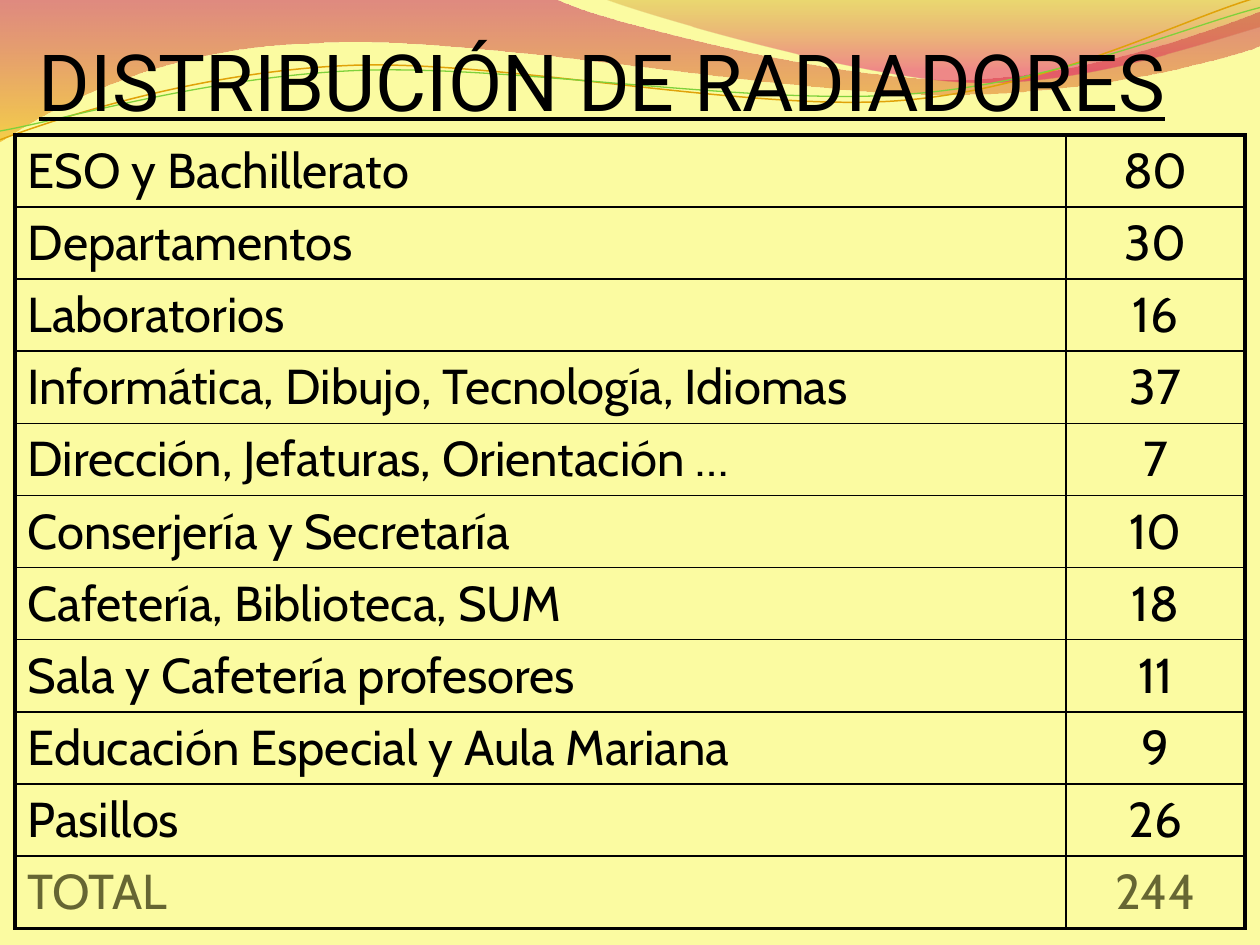
from pptx import Presentation
from pptx.dml.color import RGBColor
from pptx.enum.text import MSO_ANCHOR, PP_ALIGN
from pptx.oxml.ns import qn
from pptx.util import Inches, Pt
from lxml import etree

BLACK = "000000"
RADIATORS = [
    ("ESO y Bachillerato", "80"),
    ("Departamentos", "30"),
    ("Laboratorios", "16"),
    ("Informática, Dibujo, Tecnología, Idiomas", "37"),
    ("Dirección, Jefaturas, Orientación …", "7"),
    ("Conserjería y Secretaría", "10"),
    ("Cafetería, Biblioteca, SUM", "18"),
    ("Sala y Cafetería profesores", "11"),
    ("Educación Especial y Aula Mariana", "9"),
    ("Pasillos", "26"),
    ("TOTAL", "244"),
]

# Waves: each list holds a start point, then line ends (2 numbers)
# or Bézier segments (6 numbers), in inches.
LEFT_WAVE = [
    (0, 0), (4.4, -0.01), (4.76, 0.17, 6.64, 0.63, 7.58, 0.63),
    (8.53, 0.63, 9.58, 0.26, 10, 0.09), (10.01, 0.36),
    (9.83, 0.44, 8.7, 0.76, 7.46, 0.75), (6.22, 0.75, 3.82, 0.28, 2.57, 0.34),
    (1.29, 0.36, 0.46, 0.83, -0.01, 1.13),
]
RIGHT_WAVE = [
    (4.79, -0.01), (5.09, 0.11, 6.82, 0.62, 7.69, 0.65),
    (8.56, 0.69, 9.61, 0.32, 10, 0.21), (10, 0),
]
ORANGE_CURVE = [
    (0, 1.11), (0.48, 0.93, 1.58, 0.57, 2.77, 0.52),
    (3.95, 0.47, 5.93, 0.89, 7.13, 0.8), (8.33, 0.71, 9.38, 0.15, 9.98, -0.02),
]
GREEN_CURVE = [
    (0, 1.04), (0.47, 0.96, 1.64, 0.61, 2.83, 0.56),
    (4.03, 0.51, 5.97, 0.84, 7.17, 0.75), (8.36, 0.67, 9.41, 0.21, 10, 0.06),
]


def color(hex_value):
    return RGBColor.from_string(hex_value)


def add_outline(shapes, outline, close):
    points = [
        (Inches(x), Inches(y))
        for segment in outline
        for x, y in zip(segment[::2], segment[1::2])
    ]
    builder = shapes.build_freeform(*points[0])
    builder.add_line_segments(points[1:], close=close)
    shape = builder.convert_to_shape()
    shape.shadow.inherit = False
    # Join the three lines of each Bézier segment into one curve
    lines = iter(list(shape._element.iter(qn("a:lnTo"))))
    for segment in outline[1:]:
        first = next(lines)
        if len(segment) == 6:
            first.tag = qn("a:cubicBezTo")
            for line in (next(lines), next(lines)):
                first.append(line[0])
                line.getparent().remove(line)
    return shape


def add_wave(shapes, outline, stops):
    wave = add_outline(shapes, outline, close=True)
    wave.line.fill.background()
    wave.fill.gradient()
    wave.fill.gradient_angle = 270
    for stop, (position, hex_value, _) in zip(wave.fill.gradient_stops, stops):
        stop.position = position
        stop.color.rgb = color(hex_value)
    for rgb, (_, _, opacity) in zip(wave._element.spPr.iter(qn("a:srgbClr")), stops):
        etree.SubElement(rgb, qn("a:alpha"), val=str(opacity * 1000))


def add_curve(shapes, outline, hex_value, width):
    curve = add_outline(shapes, outline, close=False)
    curve.fill.background()
    curve.line.color.rgb = color(hex_value)
    curve.line.width = Pt(width)


def add_backdrop(slide):
    slide.background.fill.solid()
    slide.background.fill.fore_color.rgb = color("FBFBA1")
    add_wave(slide.shapes, LEFT_WAVE, [(0, "BD0059", 45), (1, "F0AB00", 55)])
    add_wave(slide.shapes, RIGHT_WAVE, [(0, "C38B00", 30), (0.8, "E1006B", 45)])
    curves = slide.shapes.add_group_shape().shapes
    add_curve(curves, ORANGE_CURVE, "E0A209", 0.85)
    add_curve(curves, GREEN_CURVE, "7FD13B", 0.75)


def add_run(paragraph, text, font, size, hex_value):
    run = paragraph.add_run()
    run.text = text
    run.font.name = font
    run.font.size = Pt(size)
    run.font.color.rgb = color(hex_value)
    return run


def add_title(slide, left, top, width, height):
    title = slide.shapes.add_textbox(left, top, width, height).text_frame
    title.word_wrap = True
    title.vertical_anchor = MSO_ANCHOR.BOTTOM
    title.margin_left = title.margin_right = title.margin_bottom = 0
    heading = add_run(title.paragraphs[0], "DISTRIBUCIÓN DE RADIADORES", "Roboto", 45, BLACK)
    heading.font.underline = True


def set_borders(cell, widths):
    """Draw the left, right, top and bottom borders, ahead of the cell fill."""
    properties = cell._tc.get_or_add_tcPr()
    for index, (side, width) in enumerate(zip("LRTB", widths)):
        border = etree.Element(qn(f"a:ln{side}"), w=str(Pt(width)))
        fill = etree.SubElement(border, qn("a:solidFill"))
        etree.SubElement(fill, qn("a:srgbClr"), val=BLACK)
        properties.insert(index, border)


def add_radiator_table(slide, left, top, width, height):
    last = len(RADIATORS) - 1
    table = slide.shapes.add_table(len(RADIATORS), 2, left, top, width, height).table
    table.first_row = table.horz_banding = False
    count_width = Inches(1.42)
    table.columns[0].width = width - count_width
    table.columns[1].width = count_width
    for r, entry in enumerate(RADIATORS):
        table.rows[r].height = height // len(RADIATORS)
        for c, text in enumerate(entry):
            cell = table.cell(r, c)
            cell.fill.background()
            outer = (c == 0, c == 1, r == 0, r == last)
            set_borders(cell, [2.25 if edge else 1 for edge in outer])
            paragraph = cell.text_frame.paragraphs[0]
            paragraph.alignment = PP_ALIGN.CENTER if c else PP_ALIGN.LEFT
            add_run(paragraph, text, "Cabin", 28, "666633" if r == last else BLACK)


def main():
    deck = Presentation()
    deck.slide_width, deck.slide_height = Inches(10), Inches(7.5)
    slide = deck.slides.add_slide(deck.slide_layouts[6])
    add_backdrop(slide)
    add_title(slide, Inches(0.31), Inches(-0.24), Inches(9), Inches(1.25))
    add_radiator_table(slide, Inches(0.12), Inches(1.07), Inches(9.76), Inches(6.3))
    deck.save("out.pptx")


if __name__ == "__main__":
    main()
